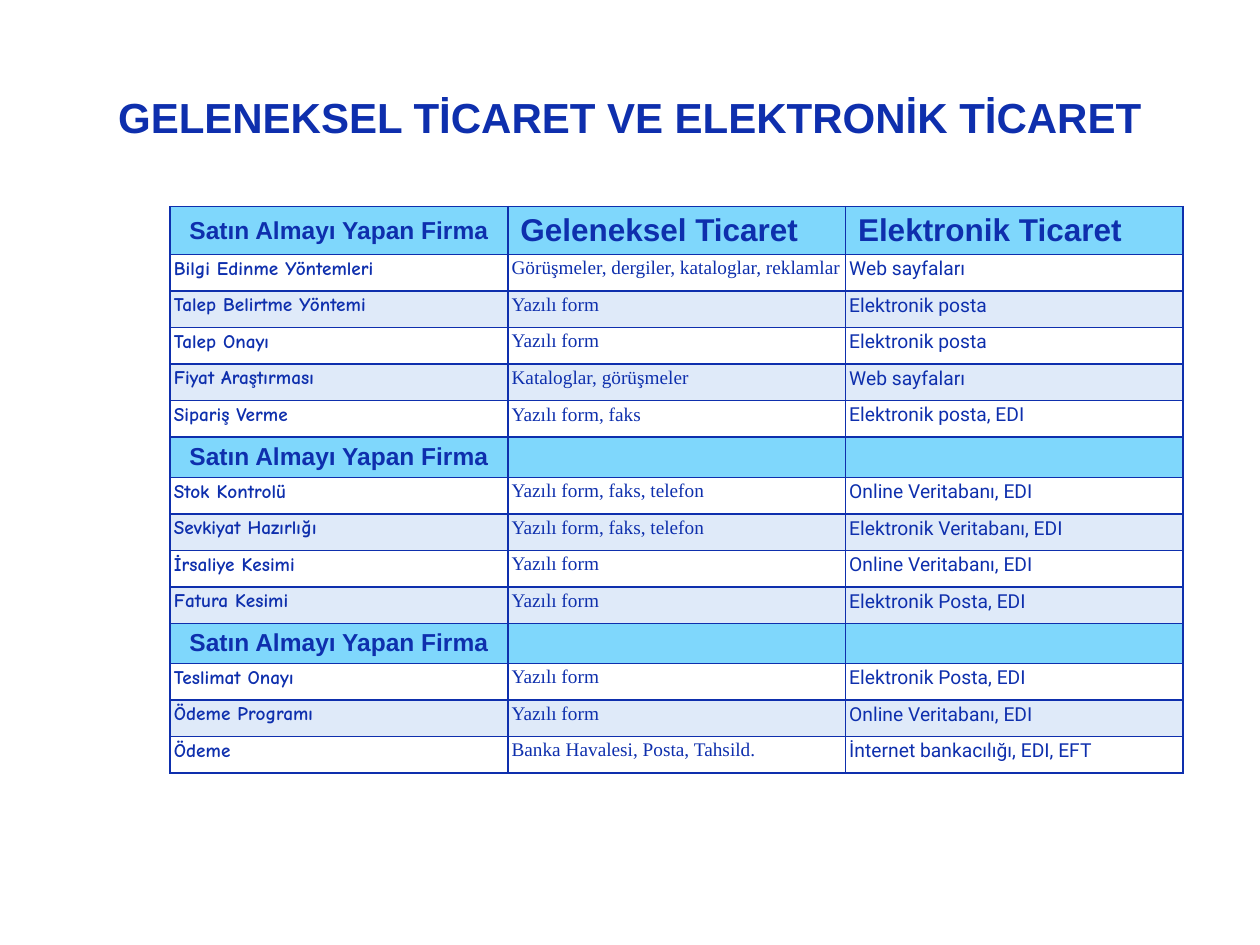
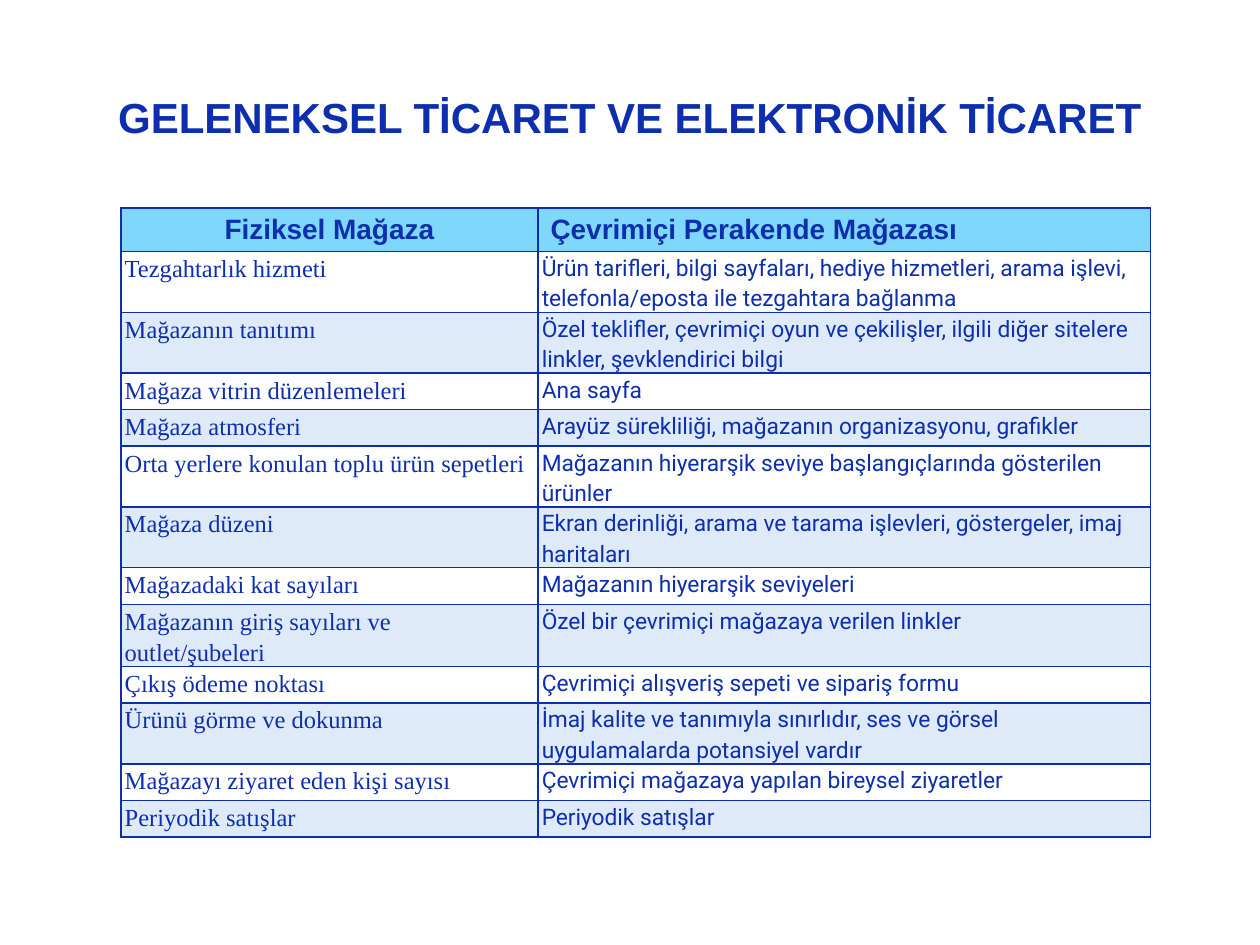
from lxml import etree
from pptx import Presentation
from pptx.dml import color
from pptx.enum import text
from pptx.oxml import ns
from pptx.util import Emu, Pt

PX = 9144  # one px is a hundredth of an inch
HUES = {"ink": "0E2FAD", "head": "7FD7FC", "band": "DFEAF9"}
TITLE = "GELENEKSEL TİCARET VE ELEKTRONİK TİCARET"
BUYER = "Satın Almayı Yapan Firma"

# Column style: font, size, bold
STEPS = [("Comic Neue", 11, True), ("Times New Roman", 11, False),
         ("Roboto", 11, False)]
SHOPS = [("Times New Roman", 14, False), ("Roboto", 13, False)]

# A row with a single entry opens a new section
TRADE = [
    (BUYER, "Geleneksel Ticaret", "Elektronik Ticaret"),
    ("Bilgi Edinme Yöntemleri", "Görüşmeler, dergiler, kataloglar, reklamlar",
     "Web sayfaları"),
    ("Talep Belirtme Yöntemi", "Yazılı form", "Elektronik posta"),
    ("Talep Onayı", "Yazılı form", "Elektronik posta"),
    ("Fiyat Araştırması", "Kataloglar, görüşmeler", "Web sayfaları"),
    ("Sipariş Verme", "Yazılı form, faks", "Elektronik posta, EDI"),
    (BUYER,),
    ("Stok Kontrolü", "Yazılı form, faks, telefon", "Online Veritabanı, EDI"),
    ("Sevkiyat Hazırlığı", "Yazılı form, faks, telefon",
     "Elektronik Veritabanı, EDI"),
    ("İrsaliye Kesimi", "Yazılı form", "Online Veritabanı, EDI"),
    ("Fatura Kesimi", "Yazılı form", "Elektronik Posta, EDI"),
    (BUYER,),
    ("Teslimat Onayı", "Yazılı form", "Elektronik Posta, EDI"),
    ("Ödeme Programı", "Yazılı form", "Online Veritabanı, EDI"),
    ("Ödeme", "Banka Havalesi, Posta, Tahsild.",
     "İnternet bankacılığı, EDI, EFT"),
]
STORE = [
    ("Fiziksel Mağaza", "Çevrimiçi Perakende Mağazası"),
    ("Tezgahtarlık hizmeti",
     "Ürün tarifleri, bilgi sayfaları, hediye hizmetleri, arama işlevi, "
     "telefonla/eposta ile tezgahtara bağlanma"),
    ("Mağazanın tanıtımı",
     "Özel teklifler, çevrimiçi oyun ve çekilişler, ilgili diğer sitelere "
     "linkler, şevklendirici bilgi"),
    ("Mağaza vitrin düzenlemeleri", "Ana sayfa"),
    ("Mağaza atmosferi",
     "Arayüz sürekliliği, mağazanın organizasyonu, grafikler"),
    ("Orta yerlere konulan toplu ürün sepetleri",
     "Mağazanın hiyerarşik seviye başlangıçlarında gösterilen ürünler"),
    ("Mağaza düzeni",
     "Ekran derinliği, arama ve tarama işlevleri, göstergeler, imaj haritaları"),
    ("Mağazadaki kat sayıları", "Mağazanın hiyerarşik seviyeleri"),
    ("Mağazanın giriş sayıları ve outlet/şubeleri",
     "Özel bir çevrimiçi mağazaya verilen linkler"),
    ("Çıkış ödeme noktası", "Çevrimiçi alışveriş sepeti ve sipariş formu"),
    ("Ürünü görme ve dokunma",
     "İmaj kalite ve tanımıyla sınırlıdır, ses ve görsel uygulamalarda "
     "potansiyel vardır"),
    ("Mağazayı ziyaret eden kişi sayısı",
     "Çevrimiçi mağazaya yapılan bireysel ziyaretler"),
    ("Periyodik satışlar", "Periyodik satışlar"),
]


class Deck:
    def __init__(self):
        self.prs = Presentation()
        self.prs.slide_width, self.prs.slide_height = self.px(1000, 750)
        self.slide = None

    def px(self, *nums):
        return [Emu(n * PX) for n in nums]

    def run(self, para, words, font, size, bold):
        run = para.add_run()
        run.text = words
        run.font.name, run.font.size, run.font.bold = font, Pt(size), bold
        run.font.color.rgb = color.RGBColor.from_string(HUES["ink"])

    def page(self, title):
        self.slide = self.prs.slides.add_slide(self.prs.slide_layouts[5])
        box = self.slide.shapes.title
        box.left, box.top, box.width, box.height = self.px(50, 30, 900, 125)
        frame = box.text_frame
        frame.auto_size = text.MSO_AUTO_SIZE.NONE
        frame.vertical_anchor = text.MSO_ANCHOR.MIDDLE
        para = frame.paragraphs[0]
        para.alignment = text.PP_ALIGN.CENTER
        self.run(para, title, "Arial", 24, True)

    def edge(self, cell):
        props = cell._tc.get_or_add_tcPr()
        for side in "LRTB":
            line = etree.SubElement(props, ns.qn("a:ln" + side), w=str(Pt(1)))
            fill = etree.SubElement(line, ns.qn("a:solidFill"))
            etree.SubElement(fill, ns.qn("a:srgbClr"), val=HUES["ink"])

    def paint(self, cell, hue):
        if hue:
            cell.fill.solid()
            cell.fill.fore_color.rgb = color.RGBColor.from_string(HUES[hue])
        else:
            cell.fill.background()

    def inset(self, cell, side, top):
        cell.margin_left = cell.margin_right = Emu(side * PX)
        cell.margin_top = cell.margin_bottom = Emu(top * PX)

    def head(self, cell, words, size, mid):
        self.inset(cell, 10, 5)
        cell.vertical_anchor = text.MSO_ANCHOR.MIDDLE
        para = cell.text_frame.paragraphs[0]
        para.alignment = text.PP_ALIGN.CENTER if mid else text.PP_ALIGN.LEFT
        self.run(para, words, "Arial", size, True)

    def body(self, cell, words, style):
        self.inset(cell, 3, 0)
        para = cell.text_frame.paragraphs[0]
        para.line_spacing, para.space_after = 1.15, Pt(10)
        if words:
            self.run(para, words, *style)

    def table(self, left, top, cols, rows, styles, sizes):
        """sizes: heading size of the first column, then of the others."""
        highs = [33] + [29] * (len(rows) - 1)
        spot = self.px(left, top, sum(cols), sum(highs))
        grid = self.slide.shapes.add_table(len(rows), len(cols), *spot).table
        grid.first_row = grid.horz_banding = False
        for col, wide in zip(grid.columns, self.px(*cols)):
            col.width = wide
        step = 0  # rows since the last heading
        for r, (row, high) in enumerate(zip(rows, self.px(*highs))):
            grid.rows[r].height = high
            top_row = r == 0 or len(row) == 1
            step = 0 if top_row else step + 1
            hue = "head" if top_row else None if step % 2 else "band"
            for c, style in enumerate(styles):
                cell = grid.cell(r, c)
                self.edge(cell)
                self.paint(cell, hue)
                words = row[c] if c < len(row) else ""
                if top_row and words:
                    self.head(cell, words, sizes[c > 0], c == 0)
                else:
                    self.body(cell, words, style)


def main():
    deck = Deck()

    # Purchase steps, traditional against electronic
    deck.page(TITLE)
    deck.table(135, 164, [268] * 3, TRADE, STEPS, (14, 18))

    # Physical store against online store
    deck.page(TITLE)
    deck.table(96, 165, [331, 486], STORE, SHOPS, (16, 16))

    deck.prs.save("out.pptx")


if __name__ == "__main__":
    main()
